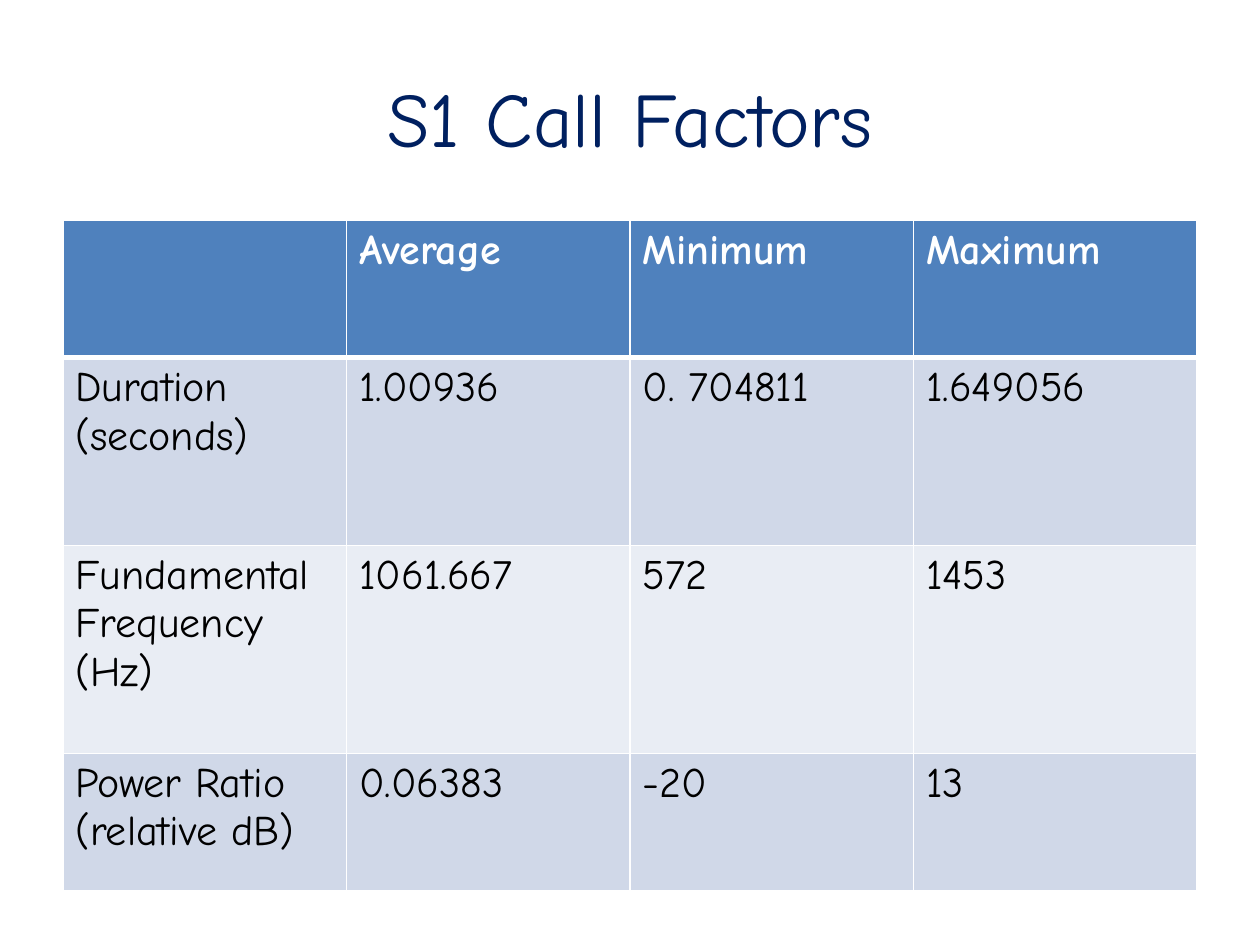
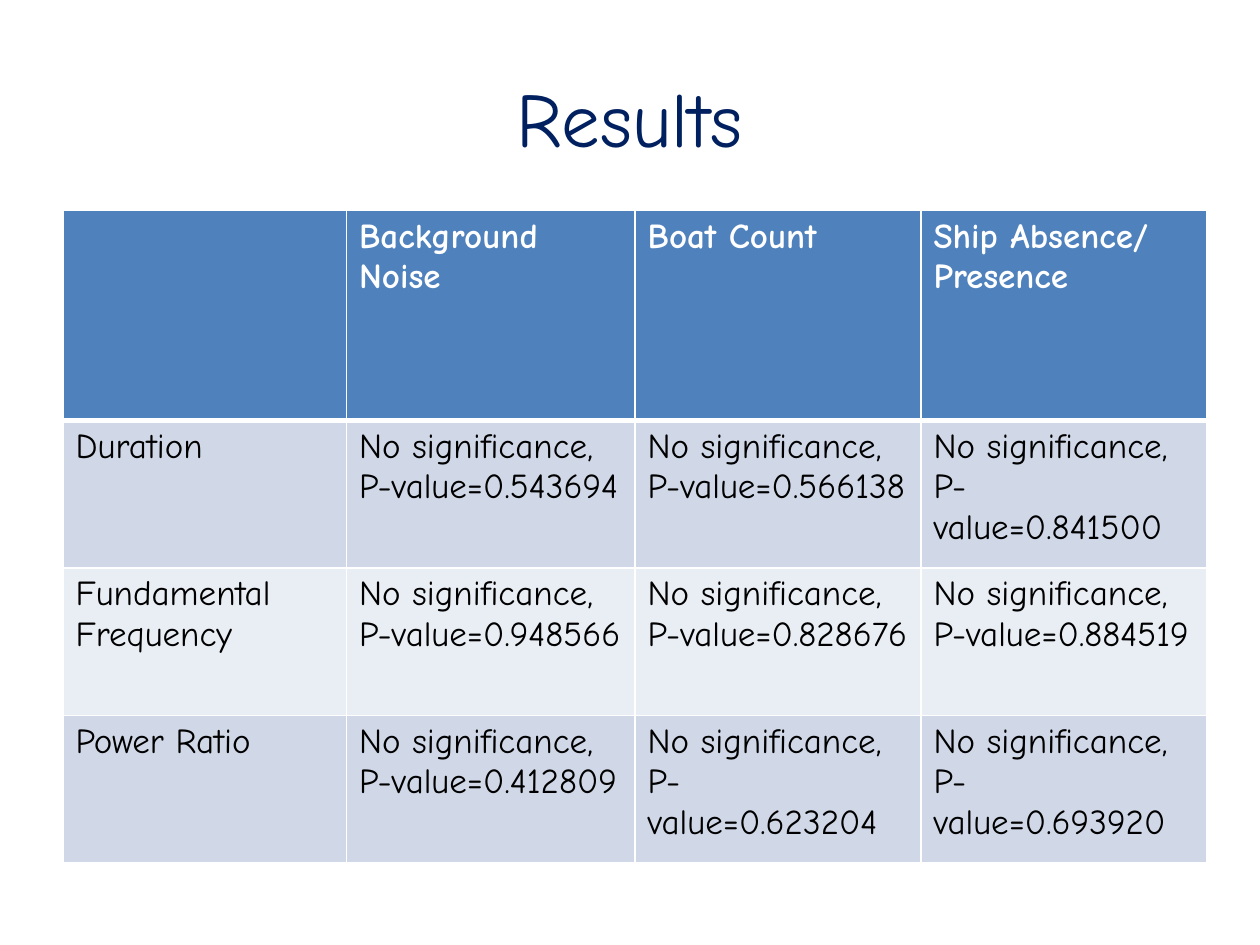
"""Build two slides of call measurements, each with a title above a table."""
from lxml import etree
from pptx import Presentation
from pptx.dml.color import RGBColor
from pptx.enum.text import MSO_ANCHOR, PP_ALIGN
from pptx.oxml.ns import qn
from pptx.util import Pt

MIDDLE = MSO_ANCHOR.MIDDLE
CENTER = PP_ALIGN.CENTER
BLANK_LAYOUT = 6
FONT = "Comic Neue"
NAVY, BLUE, WHITE, BLACK = "002060", "4F81BD", "FFFFFF", "000000"
BANDS = ("D0D8E8", "E9EDF4")
THIN, THICK = 1, 3
TITLE_BOX = (36, 21.6, 648, 90)

CALL_FACTORS = [
    ["", "Average", "Minimum", "Maximum"],
    ["Duration (seconds)", "1.00936", "0. 704811", "1.649056"],
    ["Fundamental Frequency (Hz)", "1061.667", "572", "1453"],
    ["Power Ratio (relative dB)", "0.06383", "-20", "13"],
]
P_VALUES = {
    "Duration": ("0.543694", "0.566138", "0.841500"),
    "Fundamental Frequency": ("0.948566", "0.828676", "0.884519"),
    "Power Ratio": ("0.412809", "0.623204", "0.693920"),
}
RESULTS = [["", "Background Noise", "Boat Count", "Ship Absence/\nPresence"]] + [
    [factor] + [f"No significance,\nP-value={value}" for value in values]
    for factor, values in P_VALUES.items()
]

SLIDES = [
    {
        "title": "S1 Call Factors",
        "origin": (36, 126),
        "columns": [162] * 4,
        "rows": [78.48, 107.28, 118.8, 78.48],
        "size": 24,
        "content": CALL_FACTORS,
    },
    {
        "title": "Results",
        "origin": (36, 120.24),
        "columns": [162, 164.88, 163.44, 163.44],
        "rows": [120.24] + [84.24] * 3,
        "size": 20,
        "content": RESULTS,
    },
]


def color(value):
    """Turn a hex string into a colour."""
    return RGBColor.from_string(value)


def write_text(text_frame, text, font_color, alignment=None, **font_values):
    """Write one paragraph per line of text, all in the same format."""
    text_frame.text = text
    for paragraph in text_frame.paragraphs:
        paragraph.alignment = alignment
        for run in paragraph.runs:
            run.font.color.rgb = color(font_color)
            for name, value in {"name": FONT, **font_values}.items():
                setattr(run.font, name, value)


def add_title(slide, text, box):
    """Place the centred slide title in its box."""
    text_frame = slide.shapes.add_textbox(*map(Pt, box)).text_frame
    for name, value in {"word_wrap": True, "vertical_anchor": MIDDLE}.items():
        setattr(text_frame, name, value)
    write_text(text_frame, text, NAVY, CENTER, size=Pt(44))


def set_borders(cell, top, bottom):
    """Draw white cell borders with the given top and bottom widths."""
    properties = cell._tc.get_or_add_tcPr()
    widths = {"a:lnL": THIN, "a:lnR": THIN, "a:lnT": top, "a:lnB": bottom}
    for tag, width in widths.items():
        line = etree.SubElement(properties, qn(tag), w=str(Pt(width)))
        fill = etree.SubElement(line, qn("a:solidFill"))
        etree.SubElement(fill, qn("a:srgbClr"), val=WHITE)


def add_banded_table(slide, origin, columns, rows, size, content):
    """Place a table with a blue header and alternating row bands."""
    box = (*origin, sum(columns), sum(rows))
    table = slide.shapes.add_table(len(rows), len(columns), *map(Pt, box)).table
    for column, width in zip(table.columns, columns):
        column.width = Pt(width)
    for index, (row, height, texts) in enumerate(zip(table.rows, rows, content)):
        row.height = Pt(height)
        header = index == 0
        fill_color = BLUE if header else BANDS[(index - 1) % 2]
        for cell, text in zip(row.cells, texts):
            set_borders(cell, THICK if index == 1 else THIN, THICK if header else THIN)
            cell.fill.solid()
            cell.fill.fore_color.rgb = color(fill_color)
            write_text(cell.text_frame, text, WHITE if header else BLACK,
                       size=Pt(size), bold=header)


def add_table_slide(presentation, title, **table_values):
    """Add one slide with a title and a table."""
    slide = presentation.slides.add_slide(presentation.slide_layouts[BLANK_LAYOUT])
    add_title(slide, title, TITLE_BOX)
    add_banded_table(slide, **table_values)


def main():
    """Build and save the presentation."""
    presentation = Presentation()
    presentation.slide_width, presentation.slide_height = Pt(720), Pt(540)
    for values in SLIDES:
        add_table_slide(presentation, **values)
    presentation.save("out.pptx")


if __name__ == "__main__":
    main()
